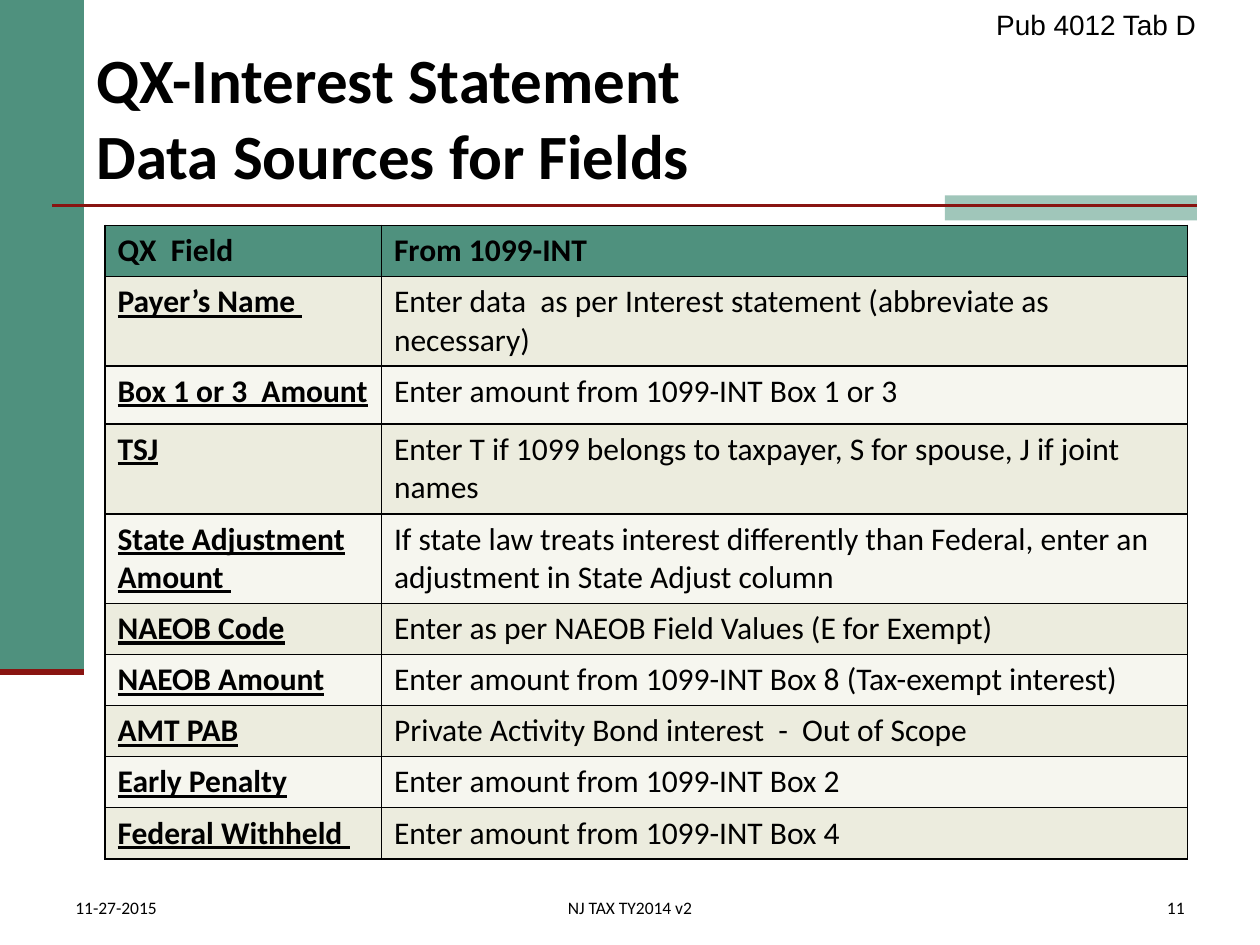
from lxml.etree import SubElement
from pptx import Presentation
from pptx.dml.color import RGBColor
from pptx.enum.shapes import MSO_CONNECTOR, MSO_SHAPE
from pptx.enum.text import MSO_ANCHOR, PP_ALIGN
from pptx.oxml.ns import qn
from pptx.util import Pt

COLORS = {
    "green": "4F917E",
    "light_green": "A0C6BA",
    "red": "891411",
    "black": "000000",
    "odd_row": "ECECDE",
    "even_row": "F6F6EF",
}
FIELDS = [
    ("QX  Field", "From 1099-INT", 29.2),
    ("Payer’s Name ", "Enter data  as per Interest statement (abbreviate as necessary)", 51.2),
    ("Box 1 or 3  Amount", "Enter amount from 1099-INT Box 1 or 3", 33.2),
    ("TSJ", "Enter T if 1099 belongs to taxpayer, S for spouse, J if joint names", 51.2),
    ("State Adjustment Amount ", "If state law treats interest differently than Federal, "
     "enter an adjustment in State Adjust column", 51.2),
    ("NAEOB Code", "Enter as per NAEOB Field Values (E for Exempt)", 29.2),
    ("NAEOB Amount", "Enter amount from 1099-INT Box 8 (Tax-exempt interest)", 29.2),
    ("AMT PAB", "Private Activity Bond interest  -  Out of Scope", 29.2),
    ("Early Penalty", "Enter amount from 1099-INT Box 2", 29.2),
    ("Federal Withheld ", "Enter amount from 1099-INT Box 4", 29.2),
]


def rgb(name):
    """Return the named palette colour."""
    return RGBColor.from_string(COLORS[name])


def style_text(tf, size, font="Calibri", bold=False, underline=False, align=PP_ALIGN.LEFT):
    """Format every run of a text frame."""
    for p in tf.paragraphs:
        p.alignment = align
        for r in p.runs:
            r.font.name = font
            r.font.size = Pt(size)
            r.font.bold = bold
            r.font.underline = underline
            r.font.color.rgb = rgb("black")


def add_text(s, box, text, size, anchor=MSO_ANCHOR.MIDDLE, wrap=True, inset=3.6, **style):
    """Add a text box with one text style."""
    tf = s.shapes.add_textbox(*map(Pt, box)).text_frame
    tf.text = text
    tf.word_wrap = wrap
    tf.vertical_anchor = anchor
    tf.margin_top = tf.margin_bottom = Pt(inset)
    style_text(tf, size, **style)


def add_block(s, box, color):
    """Add a plain filled rectangle."""
    sp = s.shapes.add_shape(MSO_SHAPE.RECTANGLE, *map(Pt, box))
    sp.shadow.inherit = False
    sp.fill.solid()
    sp.fill.fore_color.rgb = rgb(color)
    sp.line.fill.background()


def add_rule(s, left, top, width, weight):
    """Add a horizontal red rule."""
    line = s.shapes.add_connector(
        MSO_CONNECTOR.STRAIGHT, Pt(left), Pt(top), Pt(left + width), Pt(top))
    line.line.color.rgb = rgb("red")
    line.line.width = Pt(weight)
    SubElement(line._element.spPr, qn("a:effectLst"))


def add_sidebar(s, left, top, width, height):
    """Add the green side band with its red foot."""
    add_block(s, (left, top, width, height), "green")
    add_rule(s, left, top + height, width, 3.5)


def add_header(s, left, top, width, height):
    """Add the title, the tab reference and the rule with its accent."""
    right, bottom = left + width, top + height
    add_block(s, (right - 144, bottom, 144, 14.4), "light_green")
    add_rule(s, left - 18, bottom + 5.8, width + 18, 1.5)
    add_text(s, (left, top, width, height),
             "QX-Interest Statement\nData Sources for Fields", 36, bold=True)
    add_text(s, (right - 123.8, top - 17.3, 130.3, 19.4), "Pub 4012 Tab D", 16,
             anchor=MSO_ANCHOR.TOP, wrap=False, inset=0, font="Arial", align=PP_ALIGN.RIGHT)


def add_borders(cell):
    """Draw a thin black line on all four sides of a cell."""
    tcPr = cell._tc.get_or_add_tcPr()
    for side in "LRTB":
        ln = SubElement(tcPr, qn(f"a:ln{side}"), w=str(Pt(1)))
        fill = SubElement(ln, qn("a:solidFill"))
        SubElement(fill, qn("a:srgbClr"), val=COLORS["black"])


def add_field_table(s, left, top, width, height):
    """Add the table of fields and their sources."""
    table = s.shapes.add_table(
        len(FIELDS), 2, Pt(left), Pt(top), Pt(width), Pt(height)).table
    table.columns[0].width = Pt(158)
    table.columns[1].width = Pt(width - 158)
    for i, (field, source, row_height) in enumerate(FIELDS):
        table.rows[i].height = Pt(row_height)
        color = "green" if i == 0 else "odd_row" if i % 2 else "even_row"
        for j, text in enumerate((field, source)):
            cell = table.cell(i, j)
            cell.text = text
            style_text(cell.text_frame, 18, bold=i == 0 or j == 0,
                       underline=i > 0 and j == 0)
            add_borders(cell)
            cell.fill.solid()
            cell.fill.fore_color.rgb = rgb(color)


def add_footer(s, left, top, width, height):
    """Add the date, the footer text and the slide number."""
    items = [("11-27-2015", PP_ALIGN.LEFT), ("NJ TAX TY2014 v2", PP_ALIGN.CENTER),
             ("11", PP_ALIGN.RIGHT)]
    for i, (text, align) in enumerate(items):
        add_text(s, (left + i * width / 3, top, width / 3, height), text, 10,
                 anchor=MSO_ANCHOR.BOTTOM, align=align)


def main():
    """Build and save the slide."""
    prs = Presentation()
    prs.slide_width, prs.slide_height = Pt(720), Pt(540)
    s = prs.slides.add_slide(prs.slide_layouts[6])
    add_sidebar(s, 0, 0, 48, 384)
    add_header(s, 48, 21.6, 636, 90)
    add_field_table(s, 60, 128.8, 618.5, sum(row[2] for row in FIELDS))
    add_footer(s, 36, 504, 648, 24)
    prs.save("out.pptx")


if __name__ == "__main__":
    main()
